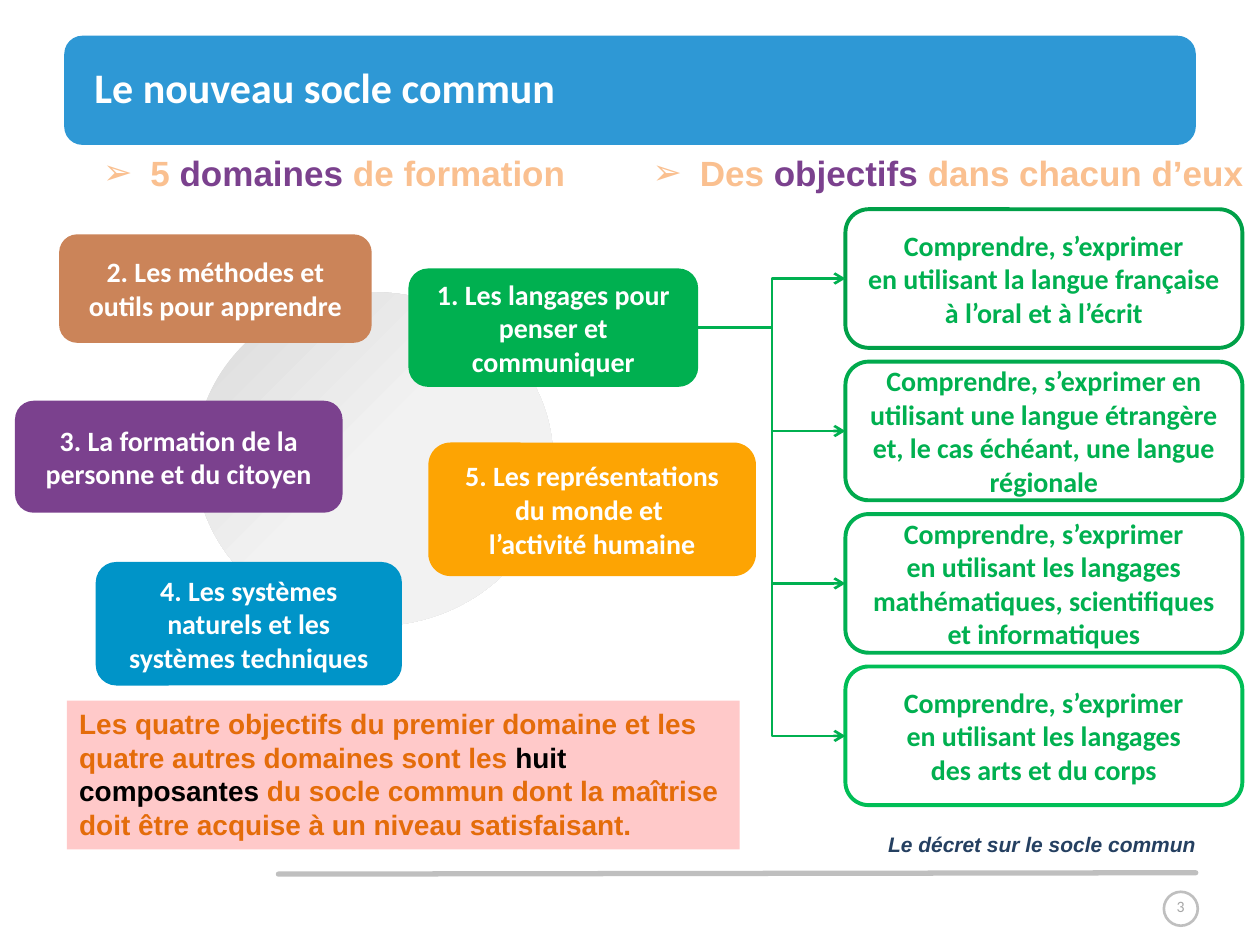
from lxml.etree import SubElement
from pptx import Presentation
from pptx.dml.color import RGBColor as Rgb
from pptx.enum.shapes import MSO_CONNECTOR as Link, MSO_SHAPE as Form
from pptx.enum.text import MSO_ANCHOR as Anchor, PP_ALIGN as Align
from pptx.oxml.ns import qn
from pptx.util import Pt

HUES = {
    "white": "FFFFFF", "black": "000000", "blue": "2E98D5", "sea": "0094C8",
    "plum": "7B418E", "clay": "CB8459", "gold": "FDA403", "green": "00B050",
    "peach": "FAC090", "rose": "FFC9C9", "rust": "E46C0A", "navy": "254061",
    "rule": "BFBFBF", "gray": "A6A6A6", "pale": "F2F2F2", "shade": "D9D9D9",
    "goal1": "00A048", "goal2": "00AA4D", "goal3": "00B052", "goal4": "00BE56",
}


class Deck:
    """Hold the style and the current slide, and draw each kind of element."""

    def __init__(self):
        self.prs = Presentation()
        self.prs.slide_width, self.prs.slide_height = Pt(720), Pt(540)
        self.slide = self.prs.slides.add_slide(self.prs.slide_layouts[6])
        self.shapes = self.slide.shapes

    def hue(self, name):
        return Rgb.from_string(HUES[name])

    def shape(self, form, box, fill=None, line=None, width=1):
        item = self.shapes.add_shape(form, *map(Pt, box))
        item.shadow.inherit = False
        if fill:
            item.fill.solid()
            item.fill.fore_color.rgb = self.hue(fill)
        else:
            item.fill.background()
        if line:
            item.line.color.rgb = self.hue(line)
            item.line.width = Pt(width)
        else:
            item.line.fill.background()
        return item

    def glow(self, box):
        item = self.shape(Form.OVAL, box)
        item.fill.gradient()
        stops = item.fill.gradient_stops
        for stop, name, place in zip(stops, ("pale", "shade"), (0.5, 1)):
            stop.color.rgb = self.hue(name)
            stop.position = place
        grad = item._element.spPr.find(qn("a:gradFill"))
        grad.remove(grad.find(qn("a:lin")))
        way = SubElement(grad, qn("a:path"), {"path": "circle"})
        SubElement(way, qn("a:fillToRect"), {"l": "100000", "t": "100000"})

    def label(self, item, runs, size, font="Calibri", align=Align.CENTER,
              anchor=Anchor.MIDDLE, wrap=True, bold=True, slant=False, mark=None):
        frame = item.text_frame
        frame.word_wrap, frame.vertical_anchor = wrap, anchor
        para = frame.paragraphs[0]
        para.alignment = align
        if mark:
            props = para._p.get_or_add_pPr()
            props.set("marL", str(Pt(27)))
            props.set("indent", str(-Pt(27)))
            SubElement(props, qn("a:buFont"), {"typeface": font})
            SubElement(props, qn("a:buChar"), {"char": mark})
        for text, name in runs:
            for row, part in enumerate(text.split("\n")):
                if row:
                    para.add_line_break()
                run = para.add_run()
                run.text = part
                face = run.font
                face.name, face.size = font, Pt(size)
                face.bold, face.italic = bold, slant
                face.color.rgb = self.hue(name)

    def text(self, box, runs, size, **style):
        item = self.shapes.add_textbox(*map(Pt, box))
        self.label(item, runs, size, **style)
        return item

    def card(self, box, text, fill):
        item = self.shape(Form.ROUNDED_RECTANGLE, box, fill)
        self.label(item, [(text, "white")], 16)
        return item

    def goal(self, box, text, line):
        item = self.shape(Form.ROUNDED_RECTANGLE, box, None, line, 2.25)
        self.label(item, [(text, "green")], 16)
        return item

    def line(self, kind, ends, name, width):
        item = self.shapes.add_connector(kind, *map(Pt, ends))
        SubElement(item._element.spPr, qn("a:effectLst"))
        item.line.color.rgb = self.hue(name)
        item.line.width = Pt(width)
        return item

    def arrow(self, start, end):
        item = self.line(Link.ELBOW, (0, 0, 0, 0), "green", 1.5)
        item.begin_connect(start, 3)
        item.end_connect(end, 1)
        stroke = item._element.spPr.find(qn("a:ln"))
        SubElement(stroke, qn("a:tailEnd"), {"type": "arrow"})


CARDS = [
    ((54.7, 321.1, 175, 70.6), "4. Les systèmes naturels et les systèmes techniques", "sea"),
    ((8.6, 229, 187.2, 64), "3. La formation de la personne et du citoyen", "plum"),
    ((33.8, 133.9, 178.6, 62), "2. Les méthodes et outils pour apprendre", "clay"),
    ((244.8, 252.9, 187.2, 76.3),
     "5. Les représentations du monde et \nl’activité humaine", "gold"),
    ((233.4, 153.4, 165.6, 67.7), "1. Les langages pour penser et communiquer", "green"),
]
GOALS = [
    "Comprendre, s’exprimer\nen utilisant la langue française à l’oral et à l’écrit",
    "Comprendre, s’exprimer en utilisant une langue étrangère et, "
    "le cas échéant, une langue régionale",
    "Comprendre, s’exprimer\nen utilisant les langages mathématiques, "
    "scientifiques et informatiques",
    "Comprendre, s’exprimer\nen utilisant les langages\ndes arts et du corps",
]
HEADS = [
    ((51.8, 82.8, 311, 31.5), ("5 ", "domaines", " de formation"), True),
    ((365.8, 82.8, 355, 31.5), ("Des ", "objectifs ", "dans chacun d’eux"), False),
]


def main():
    deck = Deck()
    left = {"font": "Arial", "align": Align.LEFT, "anchor": Anchor.TOP}

    deck.shape(Form.ROUNDED_RECTANGLE, (36.7, 20.4, 646.6, 62.4), "blue")
    deck.text((648.7, 508.3, 51.8, 19.4), [("3", "gray")], 9, bold=False)
    rule = deck.line(Link.STRAIGHT, (159.1, 499.5, 683.3, 498.7), "rule", 3)
    rule._element.spPr.find(qn("a:ln")).set("cap", "rnd")
    deck.shape(Form.OVAL, (665.1, 509.6, 19.4, 19.4), None, "rule", 1.5)
    deck.glow((111.6, 167, 204.5, 190.8))

    title = deck.text((54, 13, 629.3, 73.4), [("Le nouveau socle commun", "white")],
                      24, align=Align.LEFT)
    frame = title.text_frame
    frame.margin_left = frame.margin_right = Pt(0)
    frame.margin_top = frame.margin_bottom = Pt(0)

    cards = [deck.card(*card) for card in CARDS]
    for box, words, wrap in HEADS:
        runs = zip(words, ("peach", "plum", "peach"))
        deck.text(box, runs, 20, wrap=wrap, mark="➢", **left)

    goals = [deck.goal((483.1, 119.6 + 87.1 * row, 226.8, 79.2), text, f"goal{row + 1}")
             for row, text in enumerate(GOALS)]
    for goal in goals:
        deck.arrow(cards[-1], goal)

    deck.text((500.4, 471.6, 192.2, 21.6), [("Le décret sur le socle commun", "navy")],
              12, wrap=False, slant=True, **left)
    note = deck.shape(Form.RECTANGLE, (38.2, 400.3, 384.5, 85), "rose")
    deck.label(note, [
        ("Les quatre objectifs du premier domaine et les quatre autres domaines sont les ",
         "rust"),
        ("huit composantes", "black"),
        (" du socle commun dont la maîtrise doit être acquise à un niveau satisfaisant.",
         "rust"),
    ], 16, **left)
    deck.prs.save("out.pptx")


if __name__ == "__main__":
    main()
